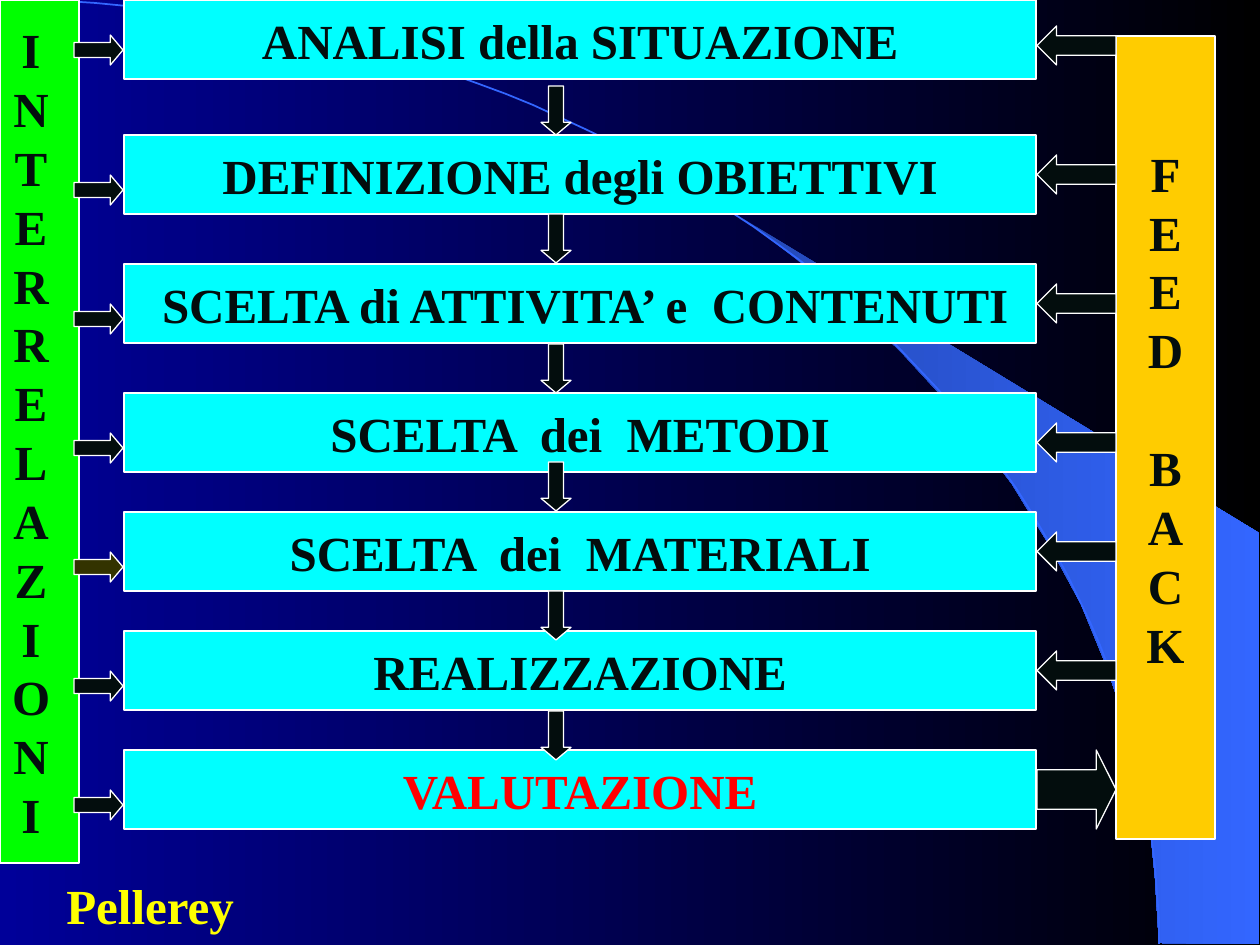
from dataclasses import dataclass

import pptx
import pptx.dml.color
import pptx.enum.shapes
import pptx.enum.text
import pptx.util

RGBColor = pptx.dml.color.RGBColor
Shape = pptx.enum.shapes.MSO_SHAPE
Align = pptx.enum.text.PP_ALIGN
Anchor = pptx.enum.text.MSO_ANCHOR

EMU_PER_PX = 914400 / 126

NAVY = RGBColor(0x00, 0x00, 0x99)
BLACK = RGBColor(0x00, 0x00, 0x00)
SWOOSH_DARK = RGBColor(0x24, 0x49, 0xB6)
SWOOSH_BLUE = RGBColor(0x33, 0x66, 0xFF)
CYAN = RGBColor(0x00, 0xFF, 0xFF)
GREEN = RGBColor(0x00, 0xFF, 0x00)
AMBER = RGBColor(0xFF, 0xCC, 0x00)
INK = RGBColor(0x03, 0x0D, 0x0D)
OLIVE = RGBColor(0x33, 0x33, 0x00)
WHITE = RGBColor(0xFF, 0xFF, 0xFF)
RED = RGBColor(0xFF, 0x00, 0x00)
YELLOW = RGBColor(0xFF, 0xFF, 0x00)

FONT = "Times New Roman"
TEXT_SIZE = pptx.util.Pt(28)
LINE_HEIGHT = 59

STAGE_LEFT, STAGE_WIDTH, STAGE_HEIGHT = 124, 912, 79
FEEDBACK_LEFT = 1037

SWOOSH_POINTS = [
    (1159, 943), (1259, 944), (1259, 533), (742, 218), (786, 251), (823, 280),
    (863, 315), (902, 353), (960, 416), (1012, 484), (1048, 543), (1081, 604),
    (1106, 665), (1125, 721), (1138, 767), (1150, 827), (1155, 877),
]
ARC_CONTROLS = [(0, 0), (640, 0), (1159, 422), (1159, 944)]
ARC_STEPS = 60


@dataclass
class Stage:
    text: str
    top: int
    feedback_top: int
    input_top: int
    color: RGBColor = INK
    input_fill: RGBColor = INK
    left_inset: int = 0


STAGES = [
    Stage("ANALISI della SITUAZIONE", 0, 26, 35),
    Stage("DEFINIZIONE degli OBIETTIVI", 135, 155, 175),
    Stage("SCELTA di ATTIVITA’ e  CONTENUTI", 264, 284, 304, left_inset=10),
    Stage("SCELTA  dei  METODI", 393, 423, 433),
    Stage("SCELTA  dei  MATERIALI", 512, 532, 552, input_fill=OLIVE),
    Stage("REALIZZAZIONE", 631, 651, 671),
    Stage("VALUTAZIONE", 750, 750, 790, color=RED),
]
DOWN_ARROW_TOPS = [86, 214, 344, 462, 591, 711]


def px(length: float) -> pptx.util.Emu:
    return pptx.util.Emu(round(length * EMU_PER_PX))


def set_gradient(fill, start: RGBColor, end: RGBColor) -> None:
    fill.gradient()
    fill.gradient_angle = 0
    for stop, color in zip(fill.gradient_stops, (start, end)):
        stop.color.rgb = color


def add_outline(page, points: list, close: bool):
    builder = page.shapes.build_freeform(*points[0], scale=EMU_PER_PX)
    builder.add_line_segments(points[1:], close=close)
    outline = builder.convert_to_shape()
    outline.shadow.inherit = False
    return outline


def arc_point(t: float) -> tuple[float, float]:
    """Point on the cubic curve given by ARC_CONTROLS."""
    weights = ((1 - t) ** 3, 3 * t * (1 - t) ** 2, 3 * t**2 * (1 - t), t**3)
    x, y = (sum(w * c[axis] for w, c in zip(weights, ARC_CONTROLS)) for axis in (0, 1))
    return x, y


def add_backdrop(page) -> None:
    set_gradient(page.background.fill, NAVY, BLACK)
    swoosh = add_outline(page, SWOOSH_POINTS, close=True)
    set_gradient(swoosh.fill, SWOOSH_DARK, SWOOSH_BLUE)
    swoosh.line.fill.background()
    arc = add_outline(page, [arc_point(i / ARC_STEPS) for i in range(ARC_STEPS + 1)], close=False)
    arc.fill.background()
    arc.line.color.rgb = SWOOSH_BLUE
    arc.line.width = pptx.util.Pt(1)


def add_block(page, kind, left: int, top: int, width: int, height: int, fill: RGBColor):
    block = page.shapes.add_shape(kind, px(left), px(top), px(width), px(height))
    block.shadow.inherit = False
    block.fill.solid()
    block.fill.fore_color.rgb = fill
    block.line.color.rgb = WHITE
    block.line.width = pptx.util.Pt(0.75)
    return block


def add_arrow(page, kind, left: int, top: int, width: int, height: int,
              head: float, fill: RGBColor = INK) -> None:
    arrow = add_block(page, kind, left, top, width, height, fill)
    arrow.adjustments[0] = 0.5
    arrow.adjustments[1] = head


def add_run(para, text: str, color: RGBColor) -> None:
    run = para.add_run()
    run.text = text
    run.font.name = FONT
    run.font.size = TEXT_SIZE
    run.font.bold = True
    run.font.color.rgb = color


def prepare_frame(block, left: int = 0, right: int = 0, bottom: int = 0):
    frame = block.text_frame
    frame.word_wrap = False
    frame.vertical_anchor = Anchor.MIDDLE
    frame.margin_left, frame.margin_right = px(left), px(right)
    frame.margin_top, frame.margin_bottom = 0, px(bottom)
    return frame


def add_stacked_words(frame, words: list[str]) -> None:
    """Write each letter on its own line, with one line of space between words."""
    letters = [(letter, i == 0 and n > 0) for n, word in enumerate(words) for i, letter in enumerate(word)]
    for index, (letter, starts_next_word) in enumerate(letters):
        para = frame.add_paragraph() if index else frame.paragraphs[0]
        para.alignment = Align.CENTER
        if starts_next_word:
            para.space_before = px(LINE_HEIGHT)
        add_run(para, letter, INK)


def add_stage(page, stage: Stage) -> None:
    box = add_block(page, Shape.RECTANGLE, STAGE_LEFT, stage.top, STAGE_WIDTH, STAGE_HEIGHT, CYAN)
    para = prepare_frame(box, left=stage.left_inset).paragraphs[0]
    para.alignment = Align.CENTER
    add_run(para, stage.text, stage.color)


def add_author(page) -> None:
    label = page.shapes.add_textbox(px(54), px(869), px(338), px(72))
    label.text_frame.word_wrap = True
    add_run(label.text_frame.paragraphs[0], "Pellerey", YELLOW)


def main() -> None:
    deck = pptx.Presentation()
    deck.slide_width, deck.slide_height = px(1260), px(945)
    page = deck.slides.add_slide(deck.slide_layouts[6])
    add_backdrop(page)

    for stage in STAGES:
        add_stage(page, stage)
    relations = add_block(page, Shape.RECTANGLE, 0, 0, 79, 863, GREEN)
    add_stacked_words(prepare_frame(relations, right=17), ["INTERRELAZIONI"])

    for top in DOWN_ARROW_TOPS:
        add_arrow(page, Shape.DOWN_ARROW, 541, top, 30, 49, 0.42)
    for stage in STAGES:
        add_arrow(page, Shape.RIGHT_ARROW, 74, stage.input_top, 49, 30, 0.42, stage.input_fill)

    feedback = add_block(page, Shape.RECTANGLE, 1116, 36, 99, 803, AMBER)
    add_stacked_words(prepare_frame(feedback, bottom=LINE_HEIGHT), ["FEED", "BACK"])
    for stage in STAGES[:-1]:
        add_arrow(page, Shape.LEFT_ARROW, FEEDBACK_LEFT, stage.feedback_top, 79, 39, 0.5)
    add_arrow(page, Shape.RIGHT_ARROW, FEEDBACK_LEFT, STAGES[-1].feedback_top, 79, 79, 0.25)

    add_author(page)
    deck.save("out.pptx")


if __name__ == "__main__":
    main()
